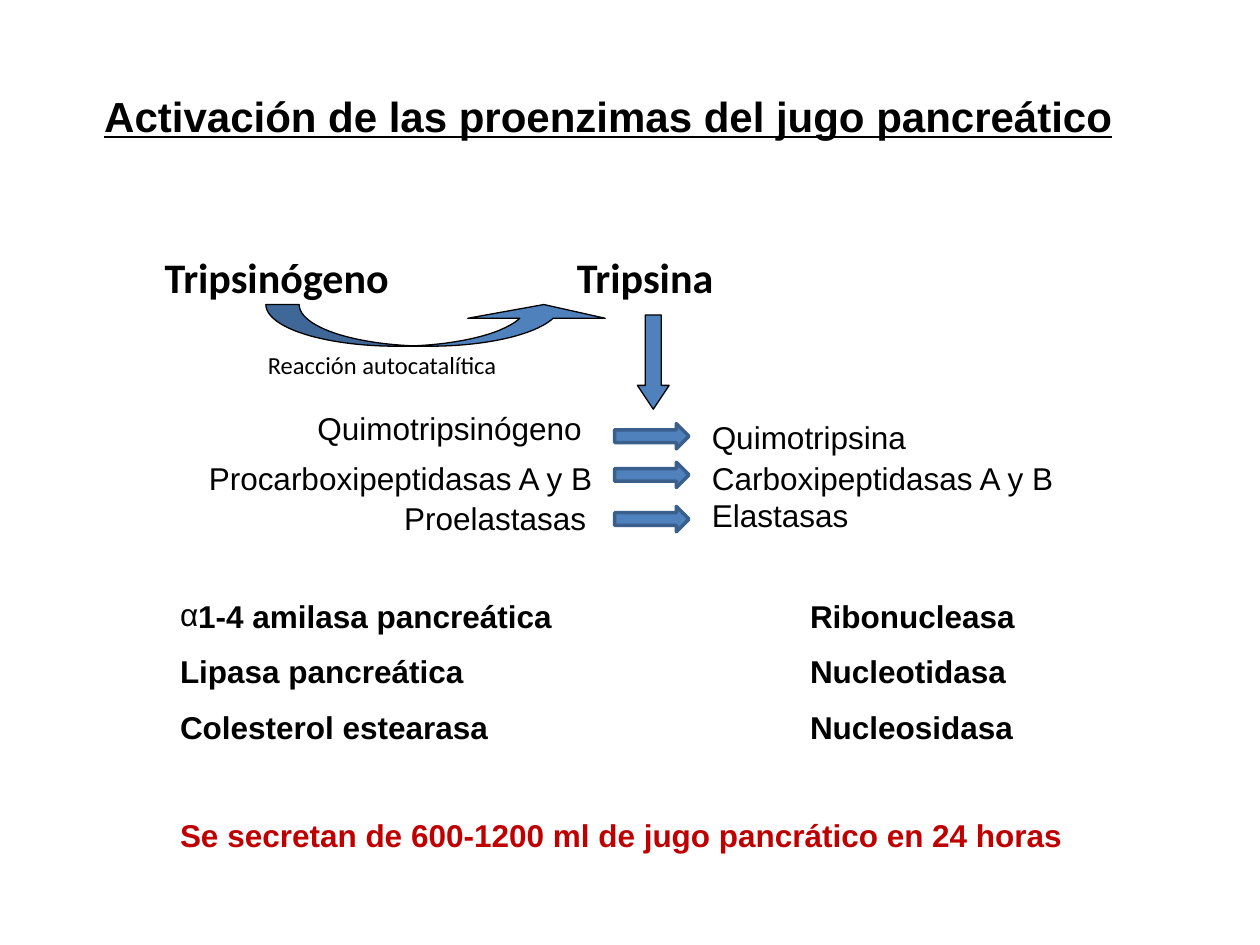
from lxml import etree
from pptx import Presentation, util as u
from pptx.dml.color import RGBColor
from pptx.enum import shapes as sh, text as tx
from pptx.oxml.ns import qn

KIND = sh.MSO_SHAPE
BLUE, EDGE, BLACK, RED = "4F81BD", "3A5F8C", "000000", "C00000"


def color(code):
    return RGBColor.from_string(code)


def style(run, size, name="Arial", tint=BLACK, **extra):
    for key, val in dict(size=u.Pt(size), name=name, **extra).items():
        setattr(run.font, key, val)
    run.font.color.rgb = color(tint)


def frame(slide, x, y, w, h, wrap=True):
    box = slide.shapes.add_textbox(u.Cm(x), u.Cm(y), u.Cm(w), u.Cm(h))
    box.text_frame.word_wrap = wrap
    return box.text_frame


def label(slide, x, y, w, h, words, size, **look):
    par = frame(slide, x, y, w, h, wrap=False).paragraphs[0]
    run = par.add_run()
    run.text = words
    style(run, size, **look)
    return par


def arrow(slide, kind, x, y, w, h, edge, width, adjust=()):
    item = slide.shapes.add_shape(kind, u.Cm(x), u.Cm(y), u.Cm(w), u.Cm(h))
    item.shadow.inherit = False
    item.fill.solid()
    item.fill.fore_color.rgb = color(BLUE)
    item.line.color.rgb = color(edge)
    item.line.width = u.Pt(width)
    for i, val in enumerate(adjust):
        item.adjustments[i] = val


def title(slide, x, y, w, h):
    par = label(slide, x, y, w, h, "Activación de las proenzimas del jugo pancreático",
                24, bold=True, underline=True)
    par.alignment = tx.PP_ALIGN.CENTER


def trypsin(slide, x, y):
    # Names of the two forms
    look = dict(name="Calibri", bold=True)
    label(slide, x, y, 5.08, 1.27, "Tripsinógeno", 24, **look)
    label(slide, x + 8.31, y, 3.3, 1.27, "Tripsina", 24, **look)
    # Curved arrow with its caption, then the arrow down
    arrow(slide, KIND.CURVED_UP_ARROW, x + 2.29, y + 1.19, 6.99, 0.84,
          BLACK, 0.75, (0.8, 3.3, 0.33))
    label(slide, x + 2.08, y + 1.98, 5.18, 0.86, "Reacción autocatalítica",
          14, name="Calibri")
    arrow(slide, KIND.DOWN_ARROW, x + 9.78, y + 1.4, 0.64, 1.9,
          BLACK, 0.75, (0.5, 0.75))


def zymogens(slide, x, y):
    # Proenzyme: left, top, width; arrow top; enzyme: top, width
    rows = [
        ("Quimotripsinógeno", 2.19, 0, 5.89, 0.41, "Quimotripsina", 0.18, 4.47),
        ("Procarboxipeptidasas A y B", 0, 0.99, 8.33, 1.19,
         "Carboxipeptidasas A y B", 0.99, 7.47),
        ("Proelastasas", 3.94, 1.8, 4.22, 2.08, "Elastasas", 1.75, 3.3),
    ]
    for pro, left, top, wide, mid, enzyme, level, span in rows:
        label(slide, x + left, y + top, wide, 1.02, pro, 18)
        arrow(slide, KIND.RIGHT_ARROW, x + 8.43, y + mid, 1.5, 0.51, EDGE, 2)
        label(slide, x + 10.14, y + level, span, 1.02, enzyme, 18)


def enzymes(slide, x, y, w, h):
    rows = [("1-4 amilasa pancreática\tRibonucleasa", 0, BLACK),
            ("Lipasa pancreática\tNucleotidasa", 10, BLACK),
            ("Colesterol estearasa\tNucleosidasa", 10, BLACK),
            ("Se secretan de 600-1200 ml de jugo pancrático en 24 horas", 40.5, RED)]
    body = frame(slide, x, y, w, h)
    for i, (words, gap, tint) in enumerate(rows):
        par = body.add_paragraph() if i else body.paragraphs[0]
        par.space_before = u.Pt(gap)
        run = par.add_run()
        run.text = words
        style(run, 18, tint=tint, bold=True)
        props = par._p.get_or_add_pPr()
        # Greek letter as the first bullet
        if i == 0:
            etree.SubElement(props, qn("a:buFont"), typeface="Arial")
            etree.SubElement(props, qn("a:buChar"), char="α")
        # Tab stop of the second column
        if "\t" in words:
            tabs = etree.SubElement(props, qn("a:tabLst"))
            etree.SubElement(tabs, qn("a:tab"), pos=str(u.Cm(12.7)), algn="l")


def main():
    deck = Presentation()
    deck.slide_width, deck.slide_height = u.Cm(25.4), u.Cm(19.05)
    slide = deck.slides.add_slide(deck.slide_layouts[6])
    title(slide, 1.47, 1.7, 21.59, 1.27)
    enzymes(slide, 3.38, 11.91, 20.83, 5.64)
    trypsin(slide, 3.07, 4.95)
    zymogens(slide, 3.96, 8.13)
    deck.save("out.pptx")


if __name__ == "__main__":
    main()
